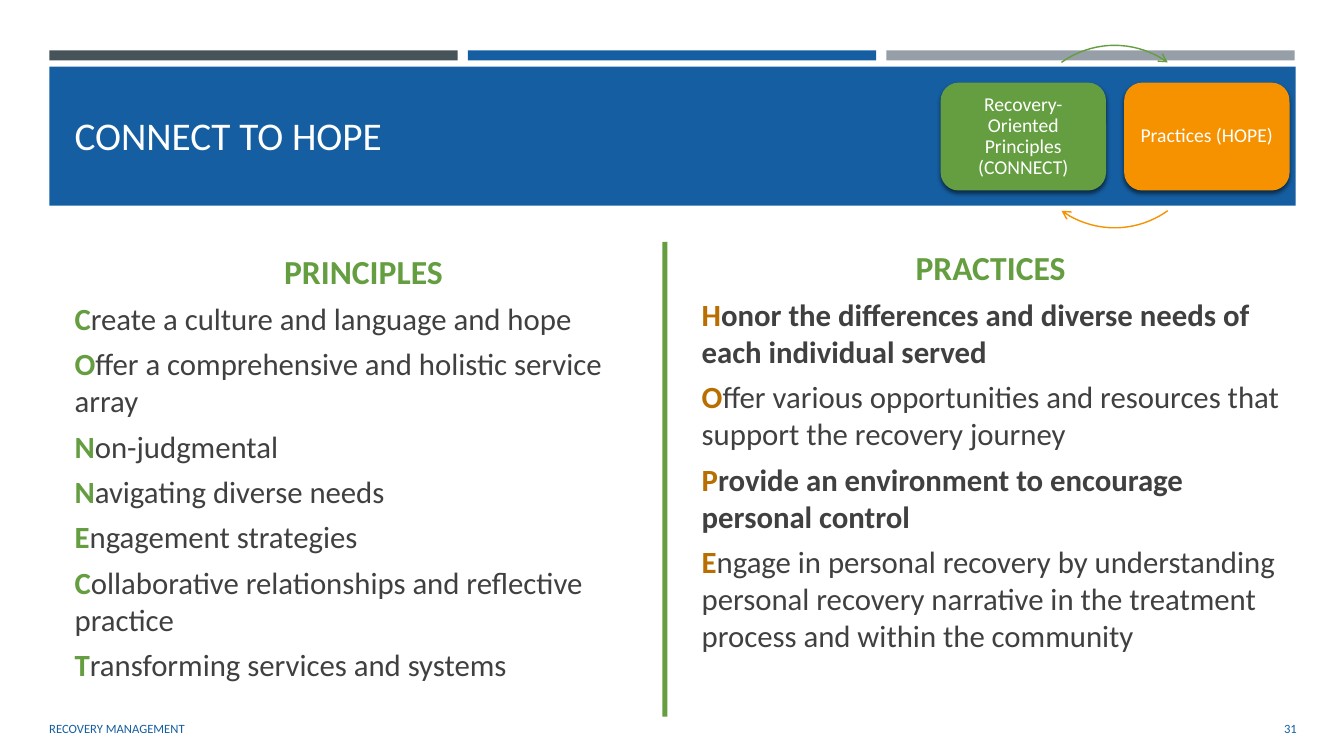
from lxml import etree
from pptx import Presentation
from pptx.dml.color import RGBColor
from pptx.enum.shapes import MSO_SHAPE
from pptx.enum.text import MSO_ANCHOR, MSO_AUTO_SIZE, PP_ALIGN
from pptx.oxml import parse_xml
from pptx.oxml.ns import nsdecls, qn
from pptx.util import Inches, Pt

BLUE = RGBColor(0x15, 0x5E, 0xA1)
SLATE = RGBColor(0x46, 0x53, 0x59)
GRAY = RGBColor(0x96, 0x9F, 0xA7)
GREEN = RGBColor(0x64, 0x9E, 0x40)
ORANGE = RGBColor(0xF6, 0x92, 0x00)
BROWN = RGBColor(0xB8, 0x6E, 0x00)
DARK = RGBColor(0x40, 0x40, 0x40)
WHITE = RGBColor(0xFF, 0xFF, 0xFF)

PRINCIPLES = [
    ("Create a culture and language and hope", False),
    ("Offer a comprehensive and holistic service array", False),
    ("Non-judgmental", False),
    ("Navigating diverse needs", False),
    ("Engagement strategies", False),
    ("Collaborative relationships and reflective practice", False),
    ("Transforming services and systems", False),
]
PRACTICES = [
    ("Honor the differences and diverse needs of each individual served", True),
    ("Offer various opportunities and resources that support the recovery journey", False),
    ("Provide an environment to encourage personal control", True),
    ("Engage in personal recovery by understanding personal recovery narrative "
     "in the treatment process and within the community", False),
]
SHADOW = (
    f'<a:effectLst {nsdecls("a")}><a:outerShdw blurRad="38100" dist="25400" '
    'dir="5400000" rotWithShape="0"><a:srgbClr val="000000">'
    '<a:alpha val="55000"/></a:srgbClr></a:outerShdw></a:effectLst>'
)


class SlideBuilder:
    font = "Calibri"

    def __init__(self, s):
        self.s = s

    def place(self, sp, box):
        sp.left, sp.top, sp.width, sp.height = map(Inches, box)

    def run(self, p, text, size, color, bold=False):
        r = p.add_run()
        r.text = text
        r.font.name = self.font
        r.font.size = Pt(size)
        r.font.color.rgb = color
        r.font.bold = bold

    def shape(self, kind, box, color):
        sp = self.s.shapes.add_shape(kind, *map(Inches, box))
        sp.shadow.inherit = False
        sp.fill.solid()
        sp.fill.fore_color.rgb = color
        sp.line.fill.background()
        return sp

    def placeholder(self, idx, box, anchor):
        sp = self.s.placeholders[idx]
        self.place(sp, box)
        self.s.shapes._spTree.append(sp._element)
        tf = sp.text_frame
        tf.word_wrap = True
        tf.auto_size = MSO_AUTO_SIZE.NONE
        tf.vertical_anchor = anchor
        return tf

    def title(self, text, box):
        p = self.placeholder(0, box, MSO_ANCHOR.MIDDLE).paragraphs[0]
        p.alignment = PP_ALIGN.LEFT
        self.run(p, text, 28, WHITE)

    def paragraph(self, p, align):
        pPr = p._p.get_or_add_pPr()
        pPr.set("marL", "0")
        pPr.set("indent", "0")
        etree.SubElement(pPr, qn("a:buNone"))
        p.alignment = align
        p.space_before = Pt(0)
        p.space_after = Pt(6)

    def acrostic(self, idx, box, heading, items, initial_color, heading_spacing):
        tf = self.placeholder(idx, box, MSO_ANCHOR.TOP)
        p = tf.paragraphs[0]
        self.paragraph(p, PP_ALIGN.CENTER)
        p.line_spacing = heading_spacing
        self.run(p, heading, 24, GREEN, True)
        for text, bold in items:
            p = tf.add_paragraph()
            self.paragraph(p, PP_ALIGN.LEFT)
            self.run(p, text[0], 22, initial_color, True)
            self.run(p, text[1:], 22, DARK, bold)

    def small_text(self, text, box, align):
        tf = self.s.shapes.add_textbox(*map(Inches, box)).text_frame
        tf.word_wrap = True
        tf.vertical_anchor = MSO_ANCHOR.MIDDLE
        p = tf.paragraphs[0]
        p.alignment = align
        self.run(p, text, 9, BLUE)

    def card(self, text, box, color):
        sp = self.shape(MSO_SHAPE.ROUNDED_RECTANGLE, box, color)
        spPr = sp._element.spPr
        spPr.replace(spPr.find(qn("a:effectLst")), parse_xml(SHADOW))
        tf = sp.text_frame
        tf.word_wrap = True
        tf.vertical_anchor = MSO_ANCHOR.MIDDLE
        tf.margin_left = tf.margin_right = Inches(0.06)
        tf.margin_top = tf.margin_bottom = Inches(0.06)
        p = tf.paragraphs[0]
        p.alignment = PP_ALIGN.CENTER
        p.line_spacing = 0.9
        self.run(p, text, 14, WHITE)

    def arc_arrow(self, box, start, end, color):
        sp = self.s.shapes.add_shape(MSO_SHAPE.ARC, *map(Inches, box))
        sp.shadow.inherit = False
        sp.adjustments[0] = start * 0.6
        sp.adjustments[1] = end * 0.6
        sp.fill.background()
        sp.line.color.rgb = color
        sp.line.width = Pt(1)
        etree.SubElement(sp.line._get_or_add_ln(), qn("a:tailEnd"), type="arrow")


def main():
    prs = Presentation()
    prs.slide_width = Inches(13.33)
    prs.slide_height = Inches(7.5)
    b = SlideBuilder(prs.slides.add_slide(prs.slide_layouts[3]))

    for i, color in enumerate((SLATE, BLUE, GRAY)):
        b.shape(MSO_SHAPE.RECTANGLE, (0.49 + 4.15 * i, 0.5, 4.05, 0.1), color)
    b.shape(MSO_SHAPE.RECTANGLE, (0.49, 0.66, 12.36, 1.38), BLUE)
    b.small_text("31", (11.81, 7.03, 1.15, 0.4), PP_ALIGN.RIGHT)
    b.small_text("RECOVERY MANAGEMENT", (0.39, 7.03, 7.46, 0.4), PP_ALIGN.LEFT)

    b.title("CONNECT TO HOPE", (0.64, 0.8, 12.06, 1.08))
    b.acrostic(1, (0.64, 2.4, 5.93, 4.63), "PRINCIPLES", PRINCIPLES, GREEN, 1.1)
    b.acrostic(2, (6.86, 2.4, 5.93, 4.43), "PRACTICES", PRACTICES, BROWN, 1.0)
    b.shape(MSO_SHAPE.RECTANGLE, (6.57, 2.4, 0.05, 4.71), GREEN)

    circle = (10.15, 0.45, 1.81, 1.81)
    b.card("Recovery-Oriented Principles (CONNECT)", (9.33, 0.82, 1.64, 1.07), GREEN)
    b.arc_arrow(circle, 234.4, 305.6, GREEN)
    b.card("Practices (HOPE)", (11.15, 0.82, 1.64, 1.07), ORANGE)
    b.arc_arrow(circle, 54.4, 125.6, ORANGE)

    prs.save("out.pptx")


if __name__ == "__main__":
    main()
